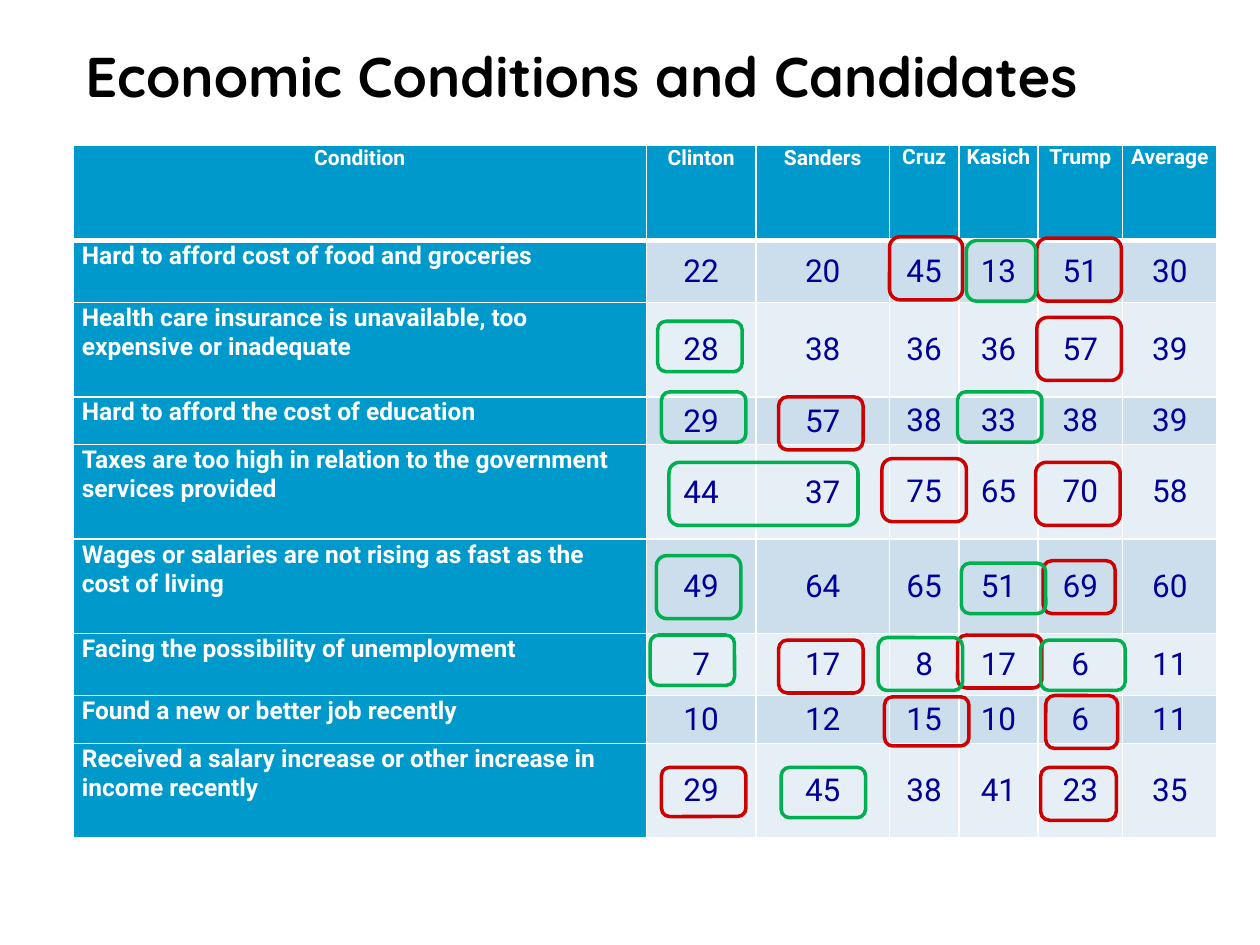
import pptx
import pptx.util
import pptx.dml.color
import pptx.enum.text
import pptx.enum.shapes
import lxml.etree

Inches, Pt = pptx.util.Inches, pptx.util.Pt
Align = pptx.enum.text.PP_ALIGN
Anchor = pptx.enum.text.MSO_ANCHOR

# Content
TITLE = "Economic Conditions and Candidates"
HEADS = ["Condition", "Clinton", "Sanders", "Cruz", "Kasich", "Trump", "Average"]
ROWS = [
    ("Hard to afford cost of food and groceries", 22, 20, 45, 13, 51, 30),
    ("Health care insurance is unavailable, too expensive or inadequate",
     28, 38, 36, 36, 57, 39),
    ("Hard to afford the cost of education", 29, 57, 38, 33, 38, 39),
    ("Taxes are too high in relation to the government services provided",
     44, 37, 75, 65, 70, 58),
    ("Wages or salaries are not rising as fast as the cost of living",
     49, 64, 65, 51, 69, 60),
    ("Facing the possibility of unemployment", 7, 17, 8, 17, 6, 11),
    ("Found a new or better job recently", 10, 12, 15, 10, 6, 11),
    ("Received a salary increase or other increase in income recently",
     29, 45, 38, 41, 23, 35),
]
WIDTHS = [4.55, 0.87, 1.06, 0.55, 0.63, 0.67, 0.75]
HEIGHTS = [0.76, 0.49, 0.75, 0.38, 0.75, 0.75, 0.49, 0.38, 0.75]

# Rings around high (red) and low (green) values: left, top, width, height
RINGS = [
    ("high", 8.23, 1.89, 0.67, 0.5), ("high", 7.06, 1.88, 0.58, 0.5),
    ("high", 8.23, 2.52, 0.67, 0.5), ("high", 6.18, 3.15, 0.67, 0.42),
    ("low", 5.31, 3.67, 1.5, 0.5), ("high", 7, 3.64, 0.67, 0.5),
    ("low", 7.6, 3.11, 0.67, 0.4), ("low", 5.25, 3.11, 0.67, 0.4),
    ("high", 8.22, 3.67, 0.67, 0.5), ("low", 5.21, 4.41, 0.67, 0.5),
    ("high", 6.18, 5.08, 0.67, 0.42), ("high", 7.6, 5.04, 0.67, 0.42),
    ("high", 7.02, 5.53, 0.67, 0.39), ("high", 8.28, 4.45, 0.57, 0.42),
    ("low", 6.97, 5.06, 0.67, 0.42), ("high", 8.26, 6.09, 0.6, 0.42),
    ("low", 7.63, 4.47, 0.67, 0.4), ("low", 7.67, 1.91, 0.55, 0.48),
    ("low", 5.22, 2.55, 0.67, 0.4), ("low", 5.16, 5.04, 0.67, 0.4),
    ("low", 6.2, 6.09, 0.67, 0.4), ("high", 5.25, 6.09, 0.67, 0.39),
    ("low", 8.26, 5.08, 0.67, 0.4), ("high", 8.3, 5.52, 0.57, 0.42),
]

THEME = {
    "title": ("Quicksand", 32, "000000", True),
    "head": ("Roboto", 12, "FFFFFF", True),
    "label": ("Roboto", 14, "FFFFFF", True),
    "value": ("Roboto", 18, "000099", False),
    "blue": "0099CC", "bands": ("CCDEEC", "E7EFF6"), "rule": "FFFFFF",
    "high": "CC0000", "low": "00B050",
}


def color(name):
    return pptx.dml.color.RGBColor.from_string(name)


def write(frame, text, style, align=Align.LEFT):
    para = frame.paragraphs[0]
    para.alignment = align
    run = para.add_run()
    run.text = text
    font = run.font
    font.name, size, tint, font.bold = THEME[style]
    font.size = Pt(size)
    font.color.rgb = color(tint)


def pad(box, left, top, right, bottom):
    box.margin_left, box.margin_top = Inches(left), Inches(top)
    box.margin_right, box.margin_bottom = Inches(right), Inches(bottom)


def border(cell, row):
    space = "http://schemas.openxmlformats.org/drawingml/2006/main"
    props = cell._tc.get_or_add_tcPr()
    for side in "LRTB":
        thick = (row, side) in ((0, "B"), (1, "T"))
        line = lxml.etree.SubElement(props, f"{{{space}}}ln{side}",
                                     w=str(Pt(3 if thick else 1)))
        fill = lxml.etree.SubElement(line, f"{{{space}}}solidFill")
        lxml.etree.SubElement(fill, f"{{{space}}}srgbClr", val=THEME["rule"])


def main():
    deck = pptx.Presentation()
    deck.slide_width, deck.slide_height = Inches(10), Inches(7.5)
    slide = deck.slides.add_slide(deck.slide_layouts[6])

    # Title
    box = slide.shapes.add_textbox(Inches(0.58), Inches(0.33), Inches(8.75), Inches(0.56))
    frame = box.text_frame
    frame.word_wrap = True
    frame.vertical_anchor = Anchor.BOTTOM
    pad(frame, 0.1, 0, 0.1, 0.03)
    write(frame, TITLE, "title")

    # Table
    grid = [HEADS] + ROWS
    table = slide.shapes.add_table(
        len(grid), len(HEADS), Inches(0.58), Inches(1.15),
        Inches(sum(WIDTHS)), Inches(sum(HEIGHTS))).table
    table.horz_banding = False
    for col, width in zip(table.columns, WIDTHS):
        col.width = Inches(width)
    for line, height in zip(table.rows, HEIGHTS):
        line.height = Inches(height)
    for r, items in enumerate(grid):
        for c, item in enumerate(items):
            cell = table.cell(r, c)
            style = "head" if r == 0 else "label" if c == 0 else "value"
            pad(cell, *((0.07, 0.01, 0.07, 0) if c < 3 else (0, 0, 0, 0)))
            cell.vertical_anchor = Anchor.MIDDLE if style == "value" else Anchor.TOP
            border(cell, r)
            cell.fill.solid()
            tint = THEME["bands"][(r - 1) % 2] if style == "value" else THEME["blue"]
            cell.fill.fore_color.rgb = color(tint)
            write(cell.text_frame, str(item), style,
                  Align.LEFT if style == "label" else Align.CENTER)

    # Rings
    for kind, *place in RINGS:
        ring = slide.shapes.add_shape(
            pptx.enum.shapes.MSO_SHAPE.ROUNDED_RECTANGLE, *map(Inches, place))
        ring.shadow.inherit = False
        ring.fill.background()
        ring.line.color.rgb = color(THEME[kind])
        ring.line.width = Pt(2)

    deck.save("out.pptx")


if __name__ == "__main__":
    main()
